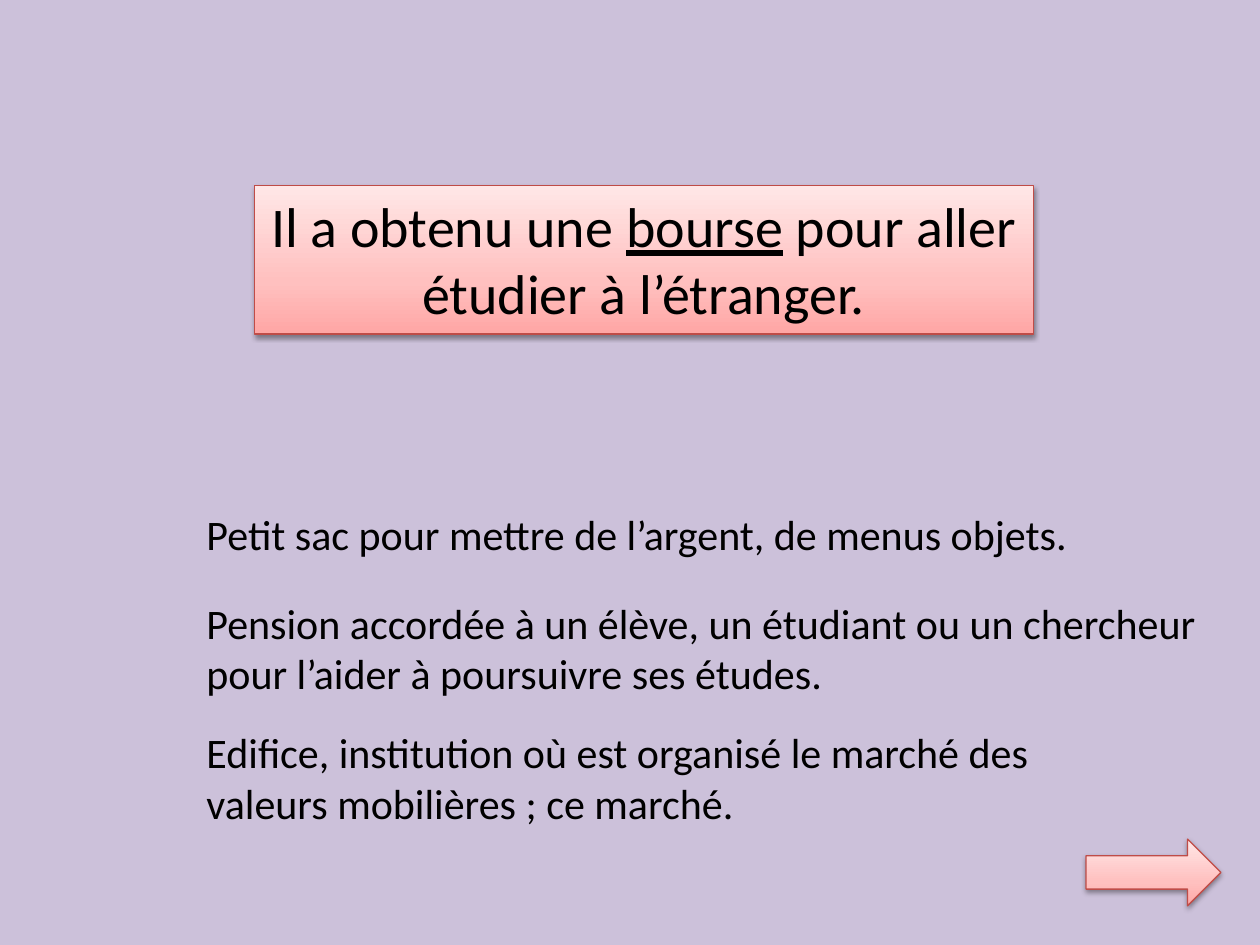
from copy import deepcopy
from dataclasses import dataclass

from lxml.etree import SubElement
from pptx import Presentation
from pptx.dml.color import RGBColor
from pptx.enum.shapes import MSO_SHAPE
from pptx.enum.text import MSO_ANCHOR, MSO_AUTO_SIZE, PP_ALIGN
from pptx.oxml.ns import qn
from pptx.util import Inches, Pt


@dataclass(frozen=True)
class Theme:
    """Colours, type sizes and font of the quiz."""
    font: str = "Calibri"
    sentence_size: int = 32
    definition_size: int = 24
    text: str = "000000"
    background: str = "CCC1DA"
    outline: str = "BF4C48"
    gradient: tuple = ((0, "FFA6A5"), (0.35, "FFC0BF"), (1, "FFE7E7"))


def rgb(code):
    """Return a colour from its hex code."""
    return RGBColor.from_string(code)


def write_text(frame, lines, *, size, color, font, align=PP_ALIGN.LEFT, underlined=""):
    """Fill a frame with one paragraph per line, underlining one word."""
    frame.word_wrap = False
    frame.auto_size = MSO_AUTO_SIZE.SHAPE_TO_FIT_TEXT
    for index, line in enumerate(lines):
        paragraph = frame.add_paragraph() if index else frame.paragraphs[0]
        paragraph.alignment = align
        parts = line.partition(underlined) if underlined else (line,)
        for part in filter(None, parts):
            run = paragraph.add_run()
            run.text = part
            run.font.name = font
            run.font.size = Pt(size)
            run.font.color.rgb = rgb(color)
            if underlined:
                run.font.underline = part == underlined


class QuizSlide:
    """Holds the theme and slide, placing elements on a 100 by 75 grid."""

    def __init__(self, deck, theme):
        """Add a title-only slide with the theme's background."""
        self.theme = theme
        self.column = deck.slide_width / 100
        self.row = deck.slide_height / 75
        self.slide = deck.slides.add_slide(deck.slide_layouts[5])
        self.slide.background.fill.solid()
        self.slide.background.fill.fore_color.rgb = rgb(theme.background)

    def box(self, left, top, width, height):
        """Turn columns and rows into slide lengths."""
        return (round(left * self.column), round(top * self.row),
                round(width * self.column), round(height * self.row))

    def decorate(self, shape):
        """Give a shape the gradient, outline and soft shadow."""
        shape.fill.gradient()
        shape.fill.gradient_angle = 90
        stops = shape.element.spPr.find(".//" + qn("a:gsLst"))
        stops.append(deepcopy(stops[0]))
        for stop, (position, color) in zip(shape.fill.gradient_stops, self.theme.gradient):
            stop.position = position
            stop.color.rgb = rgb(color)
        shape.line.color.rgb = rgb(self.theme.outline)
        shape.line.width = Pt(0.75)
        shape.shadow.inherit = False
        effects = shape.element.spPr.find(qn("a:effectLst"))
        shadow = SubElement(effects, qn("a:outerShdw"), blurRad=str(Pt(3.1)),
                            dist=str(Pt(1.6)), dir="5400000", rotWithShape="0")
        shade = SubElement(shadow, qn("a:srgbClr"), val=self.theme.text)
        SubElement(shade, qn("a:alpha"), val="38000")

    def sentence(self, lines, underlined, *area):
        """Place the quiz sentence in the title placeholder."""
        title = self.slide.shapes.title
        title.left, title.top, title.width, title.height = self.box(*area)
        self.decorate(title)
        title.text_frame.vertical_anchor = MSO_ANCHOR.TOP
        write_text(title.text_frame, lines, size=self.theme.sentence_size,
                   color=self.theme.text, font=self.theme.font,
                   align=PP_ALIGN.CENTER, underlined=underlined)

    def definition(self, lines, *area):
        """Place one possible definition."""
        answer = self.slide.shapes.add_textbox(*self.box(*area))
        write_text(answer.text_frame, lines, size=self.theme.definition_size,
                   color=self.theme.text, font=self.theme.font)

    def next_arrow(self, *area):
        """Place the arrow that leads onward."""
        arrow = self.slide.shapes.add_shape(MSO_SHAPE.RIGHT_ARROW, *self.box(*area))
        self.decorate(arrow)


def main():
    """Build and save the quiz slide."""
    deck = Presentation()
    deck.slide_width, deck.slide_height = Inches(10), Inches(7.5)
    quiz = QuizSlide(deck, Theme())
    quiz.sentence(("Il a obtenu une bourse pour aller", "étudier à l’étranger."),
                  "bourse", 20.2, 14.7, 61.8, 11.8)
    quiz.next_arrow(86.2, 66.6, 10.7, 5.3)
    definitions = (
        (39.9, 71.8, ("Petit sac pour mettre de l’argent, de menus objets.",)),
        (46.9, 81.3, ("Pension accordée à un élève, un étudiant ou un chercheur",
                      "pour l’aider à poursuivre ses études.")),
        (57.2, 67.9, ("Edifice, institution où est organisé le marché des",
                      "valeurs mobilières ; ce marché.")),
    )
    for top, width, lines in definitions:
        quiz.definition(lines, 15.4, top, width, 1 + 4.05 * len(lines))
    deck.save("out.pptx")


if __name__ == "__main__":
    main()
